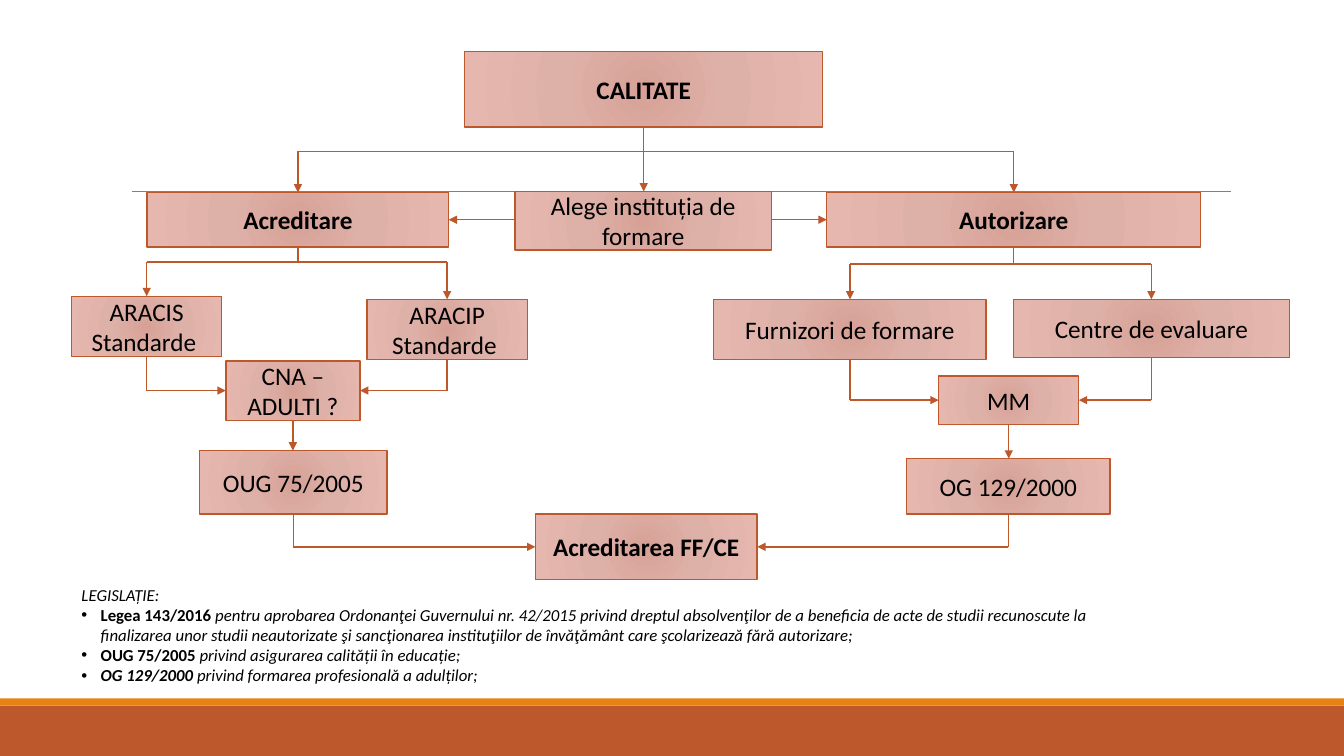
from lxml import etree
from pptx import Presentation
from pptx.dml.color import RGBColor
from pptx.enum import shapes, text
from pptx.oxml import ns, parse_xml
from pptx.util import Inches, Pt

RUST = RGBColor(0xBD, 0x58, 0x2C)
ORANGE = RGBColor(0xE4, 0x83, 0x12)
GREY = RGBColor(0x80, 0x80, 0x80)
BLACK = RGBColor(0, 0, 0)
PINKS = [(0, RGBColor(0xD7, 0xA1, 0x97)), (45, RGBColor(0xDE, 0xB1, 0xA8)),
         (100, RGBColor(0xE6, 0xB7, 0xAE))]
FONT = "Calibri"

TITLE = "CALITATE"
BOXES = {
    "CALITATE": (4.61, 0.51, 3.55, 0.75),
    "Acreditare": (1.46, 1.91, 2.99, 0.54),
    "Alege instituția de formare": (5.11, 1.9, 2.54, 0.58),
    "Autorizare": (8.2, 1.91, 3.71, 0.54),
    "ARACIS\nStandarde ": (0.71, 2.94, 1.49, 0.6),
    "ARACIP\nStandarde ": (3.64, 2.97, 1.59, 0.6),
    "Furnizori de formare": (7.08, 2.97, 2.7, 0.6),
    "Centre de evaluare": (10.05, 2.97, 2.74, 0.58),
    "CNA –ADULTI ?": (2.24, 3.58, 1.33, 0.59),
    "MM": (9.31, 3.73, 1.39, 0.48),
    "OUG 75/2005": (1.98, 4.47, 1.86, 0.63),
    "OG 129/2000": (8.99, 4.55, 2.02, 0.55),
    "Acreditarea FF/CE": (5.31, 5.1, 2.2, 0.65),
}
BOLD_BOXES = {"CALITATE", "Acreditare", "Autorizare", "Acreditarea FF/CE"}
FORKS = [
    ("CALITATE", 1.5, ["Acreditare", "Autorizare"]),
    ("Acreditare", 2.6, ["ARACIS\nStandarde ", "ARACIP\nStandarde "]),
    ("Autorizare", 2.62, ["Furnizori de formare", "Centre de evaluare"]),
]
MERGES = [
    ("ARACIS\nStandarde ", "ARACIP\nStandarde ", "CNA –ADULTI ?"),
    ("Furnizori de formare", "Centre de evaluare", "MM"),
    ("OUG 75/2005", "OG 129/2000", "Acreditarea FF/CE"),
]
DROPS = [("CALITATE", "Alege instituția de formare"),
         ("CNA –ADULTI ?", "OUG 75/2005"), ("MM", "OG 129/2000")]
CHOICE = ("Acreditare", "Alege instituția de formare", "Autorizare")

LEGISLATION = [
    [("LEGISLAȚIE:", False, True)],
    [("Legea 143/2016 ", True, False),
     ("pentru aprobarea Ordonanţei Guvernului nr. 42/2015 privind dreptul "
      "absolvenţilor de a beneficia de acte de studii recunoscute la finalizarea "
      "unor studii neautorizate şi sancţionarea instituţiilor de învăţământ care "
      "şcolarizează fără autorizare;", False, True)],
    [("OUG 75/2005 ", True, False),
     ("privind asigurarea calității în educație;", False, True)],
    [("OG 129/2000 ", True, True),
     ("privind formarea profesională a adulților;", False, True)],
]


def center_x(name):
    """Return the horizontal centre of a box."""
    left, _, width, _ = BOXES[name]
    return left + width / 2


def center_y(name):
    """Return the vertical centre of a box."""
    _, top, _, height = BOXES[name]
    return top + height / 2


def bottom(name):
    """Return the lower edge of a box."""
    return BOXES[name][1] + BOXES[name][3]


def right(name):
    """Return the right edge of a box."""
    return BOXES[name][0] + BOXES[name][2]


def add_run(paragraph, words, size, bold=False, italic=False):
    """Add one formatted run."""
    run = paragraph.add_run()
    run.text = words
    run.font.name = FONT
    run.font.size = Pt(size)
    run.font.bold = bold
    run.font.italic = italic
    run.font.color.rgb = BLACK


def add_line(slide, points, arrow=True, color=RUST, width=1):
    """Draw straight connectors through the points, with an arrow on the last."""
    for start, end in zip(points, points[1:]):
        line = slide.shapes.add_connector(
            shapes.MSO_CONNECTOR.STRAIGHT, *(Inches(value) for value in start + end))
        line.line.color.rgb = color
        line.line.width = Pt(width)
        properties = line._element.spPr
        etree.SubElement(properties, ns.qn("a:effectLst"))
        if arrow and end == points[-1]:
            etree.SubElement(properties.find(ns.qn("a:ln")), ns.qn("a:tailEnd"),
                             type="triangle")


def add_bar(slide, top, height, color):
    """Draw a full-width footer bar."""
    bar = slide.shapes.add_shape(shapes.MSO_SHAPE.RECTANGLE, 0, Inches(top),
                                 Inches(13.33), Inches(height))
    bar.shadow.inherit = False
    bar.fill.solid()
    bar.fill.fore_color.rgb = color
    bar.line.fill.background()


def fill_radial(shape):
    """Give a shape the pink gradient that spreads from its centre."""
    shape.fill.gradient()
    old = shape._element.spPr.find(ns.qn("a:gradFill"))
    stops = "".join(f'<a:gs pos="{place * 1000}"><a:srgbClr val="{color}"/></a:gs>'
                    for place, color in PINKS)
    new = parse_xml(
        f'<a:gradFill {ns.nsdecls("a")} rotWithShape="1"><a:gsLst>{stops}</a:gsLst>'
        '<a:path path="circle"><a:fillToRect l="100000" t="100000" r="100000" '
        'b="100000"/></a:path></a:gradFill>')
    old.getparent().replace(old, new)


def add_box(slide, name):
    """Draw a box of the flow chart; the top one is the slide title."""
    place = [Inches(value) for value in BOXES[name]]
    if name == TITLE:
        box = slide.shapes.title
        box.left, box.top, box.width, box.height = place
    else:
        box = slide.shapes.add_shape(shapes.MSO_SHAPE.RECTANGLE, *place)
        box.shadow.inherit = False
    fill_radial(box)
    box.line.color.rgb = RUST
    box.line.width = Pt(1)
    frame = box.text_frame
    frame.word_wrap = True
    frame.auto_size = text.MSO_AUTO_SIZE.NONE
    frame.vertical_anchor = text.MSO_ANCHOR.MIDDLE
    for index, words in enumerate(name.split("\n")):
        paragraph = frame.add_paragraph() if index else frame.paragraphs[0]
        paragraph.alignment = text.PP_ALIGN.CENTER
        add_run(paragraph, words, 18, name in BOLD_BOXES)


def add_legislation(slide):
    """Write the heading and the bulleted list of laws."""
    frame = slide.shapes.add_textbox(Inches(0.71), Inches(5.75), Inches(10.45),
                                     Inches(1.31)).text_frame
    frame.word_wrap = True
    for index, runs in enumerate(LEGISLATION):
        paragraph = frame.add_paragraph() if index else frame.paragraphs[0]
        if index:
            properties = paragraph._p.get_or_add_pPr()
            properties.set("marL", str(Inches(0.19)))
            properties.set("indent", str(-Inches(0.19)))
            etree.SubElement(properties, ns.qn("a:buFont"), typeface="Arial")
            etree.SubElement(properties, ns.qn("a:buChar"), char="•")
        for words, bold, italic in runs:
            add_run(paragraph, words, 12, bold, italic)


def main():
    """Build the slide and save it."""
    presentation = Presentation()
    presentation.slide_width, presentation.slide_height = Inches(13.33), Inches(7.5)
    slide = presentation.slides.add_slide(presentation.slide_layouts[5])
    add_bar(slide, 7, 0.5, RUST)
    add_bar(slide, 6.93, 0.07, ORANGE)
    add_line(slide, [(1.31, 1.9), (12.21, 1.9)], False, GREY, 0.5)
    for name in BOXES:
        add_box(slide, name)
    for parent, level, children in FORKS:
        middle = center_x(parent)
        add_line(slide, [(middle, bottom(parent)), (middle, level)], False)
        for child in children:
            column = center_x(child)
            add_line(slide, [(middle, level), (column, level), (column, BOXES[child][1])])
    for first, second, target in MERGES:
        level = center_y(target)
        for source, edge in ((first, BOXES[target][0]), (second, right(target))):
            column = center_x(source)
            add_line(slide, [(column, bottom(source)), (column, level), (edge, level)])
    for upper, lower in DROPS:
        column = center_x(upper)
        add_line(slide, [(column, bottom(upper)), (column, BOXES[lower][1])])
    west, chooser, east = CHOICE
    level = center_y(west)
    add_line(slide, [(BOXES[chooser][0], level), (right(west), level)])
    add_line(slide, [(right(chooser), level), (BOXES[east][0], level)])
    add_legislation(slide)
    presentation.save("out.pptx")


if __name__ == "__main__":
    main()
